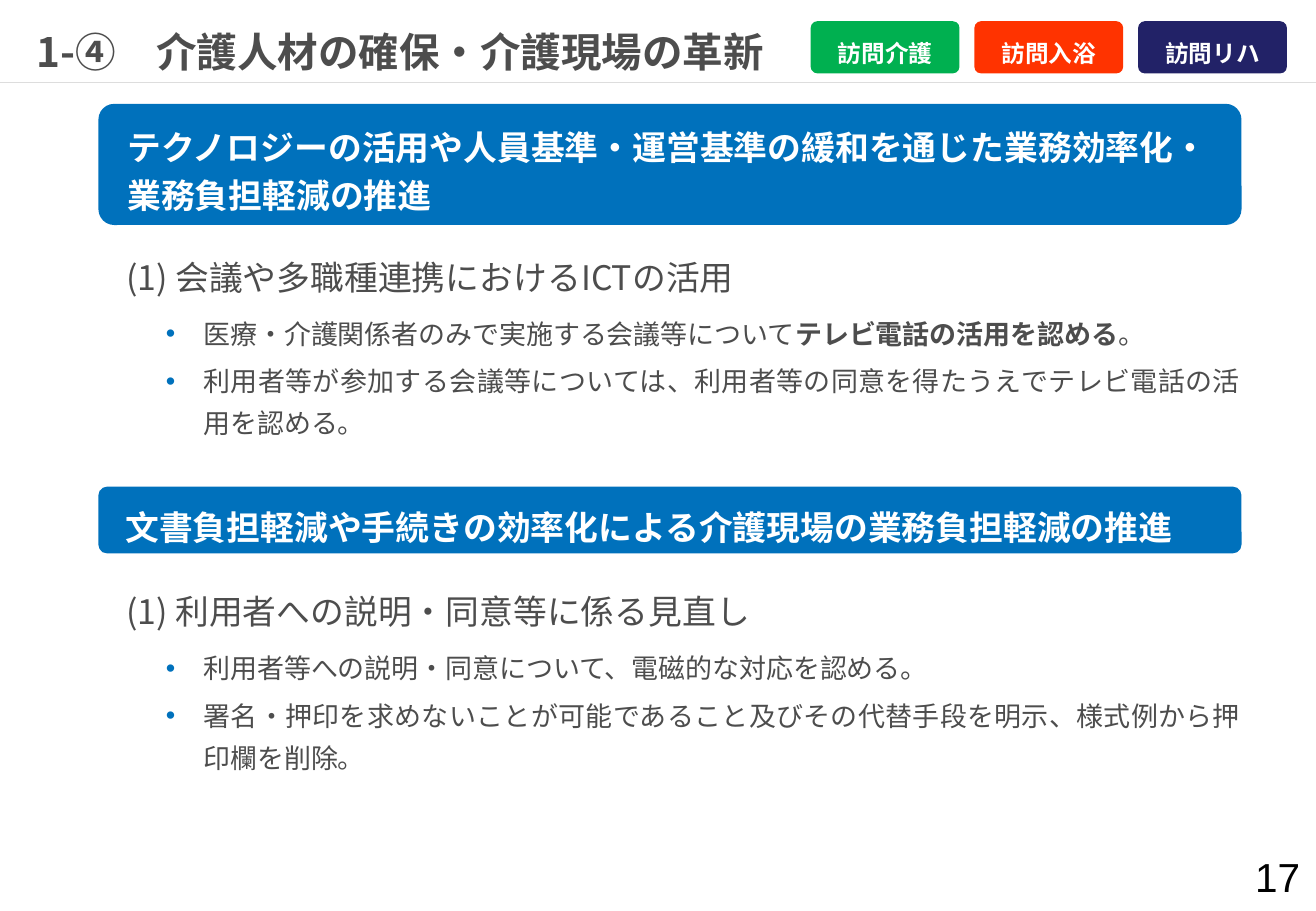
import dataclasses

import lxml.etree
import pptx
import pptx.dml.color
import pptx.enum.shapes
import pptx.enum.text
import pptx.oxml.ns
import pptx.util

ALIGN = pptx.enum.text.PP_ALIGN
ANCHOR = pptx.enum.text.MSO_ANCHOR
qn = pptx.oxml.ns.qn


@dataclasses.dataclass(frozen=True)
class Theme:
    font: str = "Noto Sans CJK JP"
    number_font: str = "Arial"
    body: str = "4D4D4D"
    blue: str = "0071BC"
    white: str = "FFFFFF"
    black: str = "000000"
    rule: str = "DDDDDD"
    green: str = "00B050"
    red: str = "FF3300"
    navy: str = "222267"
    title_size: int = 24
    heading_size: int = 20
    item_size: int = 16
    tag_size: int = 14
    corner: float = 0.13


THEME = Theme()
WIDTH = pptx.util.Inches(10.83)
HEIGHT = pptx.util.Inches(7.5)


def col(share):
    return round(WIDTH * share / 100)


def row(share):
    return round(HEIGHT * share / 100)


def place(box):
    left, top, width, height = box
    return col(left), row(top), col(width), row(height)


def rgb(value):
    return pptx.dml.color.RGBColor.from_string(value)


def add_bullet(paragraph, color):
    properties = paragraph._p.get_or_add_pPr()
    indent = pptx.util.Inches(0.31)
    properties.set("marL", str(indent))
    properties.set("indent", str(-indent))
    bullet_color = lxml.etree.SubElement(properties, qn("a:buClr"))
    lxml.etree.SubElement(bullet_color, qn("a:srgbClr"), val=color)
    lxml.etree.SubElement(properties, qn("a:buFont"), typeface=THEME.number_font)
    lxml.etree.SubElement(properties, qn("a:buChar"), char="•")


def write(frame, text, size, color=THEME.body, font=THEME.font, bold=False,
          strong="", align=ALIGN.LEFT, anchor=ANCHOR.TOP, spacing=None,
          bullet=None, insets=(0, 0, 0, 0), grow=False):
    frame.word_wrap = True
    frame.vertical_anchor = anchor
    if grow:
        frame.auto_size = pptx.enum.text.MSO_AUTO_SIZE.SHAPE_TO_FIT_TEXT
    left, top, right, bottom = insets
    frame.margin_left, frame.margin_right = col(left), col(right)
    frame.margin_top, frame.margin_bottom = row(top), row(bottom)
    paragraph = frame.paragraphs[0]
    paragraph.alignment = align
    if spacing:
        paragraph.line_spacing = spacing
    if bullet:
        add_bullet(paragraph, bullet)
    before, match, after = text.partition(strong) if strong else (text, "", "")
    for part, is_bold in ((before, bold), (match, True), (after, bold)):
        if part:
            run = paragraph.add_run()
            run.text = part
            run.font.name = font
            run.font.size = pptx.util.Pt(size)
            run.font.bold = is_bold
            run.font.color.rgb = rgb(color)
            lxml.etree.SubElement(run._r.rPr, qn("a:ea"), typeface=font)


def add_text(slide, box, text, size, **style):
    write(slide.shapes.add_textbox(*place(box)).text_frame, text, size, **style)


def add_block(slide, box, text, size, fill=None, corner=0, **style):
    block = slide.shapes.add_shape(
        pptx.enum.shapes.MSO_SHAPE.ROUNDED_RECTANGLE, *place(box))
    block.adjustments[0] = corner
    block.shadow.inherit = False
    block.line.fill.background()
    if fill:
        block.fill.solid()
        block.fill.fore_color.rgb = rgb(fill)
    else:
        block.fill.background()
    write(block.text_frame, text, size, grow=True, **style)


def add_panel(slide, box, fill, text, size, align=ALIGN.LEFT):
    add_block(slide, box, text, size, fill=fill, corner=THEME.corner,
              color=THEME.white, bold=True, align=align,
              anchor=ANCHOR.MIDDLE, spacing=1.2,
              insets=(1.85, 1.07, 1.85, 0.53))


def add_header(slide, box, title):
    left, top, width, height = box
    rule_y = row(top + height)
    rule = slide.shapes.add_connector(
        pptx.enum.shapes.MSO_CONNECTOR.STRAIGHT,
        col(left), rule_y, col(left + width), rule_y)
    rule.line.color.rgb = rgb(THEME.rule)
    rule.line.width = pptx.util.Pt(0.75)
    lxml.etree.SubElement(rule._element.spPr, qn("a:effectLst"))
    add_text(slide, (left + 2.77, top + 2.8, 91.6, 5.73), title,
             THEME.title_size, bold=True, anchor=ANCHOR.MIDDLE)


def add_tags(slide, box, tags):
    left, top, width, height = box
    gap = 1.13
    tag_width = (width - gap * (len(tags) - 1)) / len(tags)
    for index, (label, fill) in enumerate(tags):
        tag_left = left + index * (tag_width + gap)
        add_panel(slide, (tag_left, top, tag_width, height), fill, label,
                  THEME.tag_size, align=ALIGN.CENTER)


def add_section(slide, box, banner_height, banner, heading, items):
    left, top, width, height = box
    bottom = top + height
    item_inset, line_height, item_gap = 5.12, 4.67, 0.53
    add_panel(slide, (left, top, width, banner_height), THEME.blue, banner,
              THEME.heading_size)
    add_block(slide, (left + 2.1, bottom - 21.47, 81.44, 5.47), heading,
              THEME.heading_size, align=ALIGN.JUSTIFY, spacing=1.3)
    item_top = bottom - 14.53
    for text, strong, lines in items:
        item_height = lines * line_height
        add_block(slide,
                  (left + item_inset, item_top, width - item_inset, item_height),
                  text, THEME.item_size, strong=strong, align=ALIGN.JUSTIFY,
                  spacing=1.3, bullet=THEME.blue)
        item_top += item_height + item_gap


def add_page_number(slide, box, number):
    add_text(slide, box, number, THEME.title_size, color=THEME.black,
             font=THEME.number_font, align=ALIGN.RIGHT)


def main():
    deck = pptx.Presentation()
    deck.slide_width, deck.slide_height = WIDTH, HEIGHT
    slide = deck.slides.add_slide(deck.slide_layouts[6])
    add_header(slide, (0, 0, 100, 9.07), "1-④　介護人材の確保・介護現場の革新")
    add_tags(slide, (61.6, 2.33, 36.19, 5.73), (
        ("訪問介護", THEME.green),
        ("訪問入浴", THEME.red),
        ("訪問リハ", THEME.navy),
    ))
    add_section(
        slide, (7.48, 11.4, 86.86, 36.9), 13.3,
        "テクノロジーの活用や人員基準・運営基準の緩和を通じた業務効率化・業務負担軽減の推進",
        "(1) 会議や多職種連携におけるICTの活用",
        (
            ("医療・介護関係者のみで実施する会議等についてテレビ電話の活用を認める。",
             "テレビ電話の活用を認める", 1),
            ("利用者等が参加する会議等については、利用者等の同意を得たうえでテレビ電話の活用を認める。",
             "", 2),
        ))
    add_section(
        slide, (7.48, 53.42, 86.86, 31.62), 7.33,
        "文書負担軽減や手続きの効率化による介護現場の業務負担軽減の推進",
        "(1) 利用者への説明・同意等に係る見直し",
        (
            ("利用者等への説明・同意について、電磁的な対応を認める。", "", 1),
            ("署名・押印を求めないことが可能であること及びその代替手段を明示、様式例から押印欄を削除。",
             "", 2),
        ))
    add_page_number(slide, (75.44, 93.5, 23.36, 5.2), "17")
    deck.save("out.pptx")


if __name__ == "__main__":
    main()
